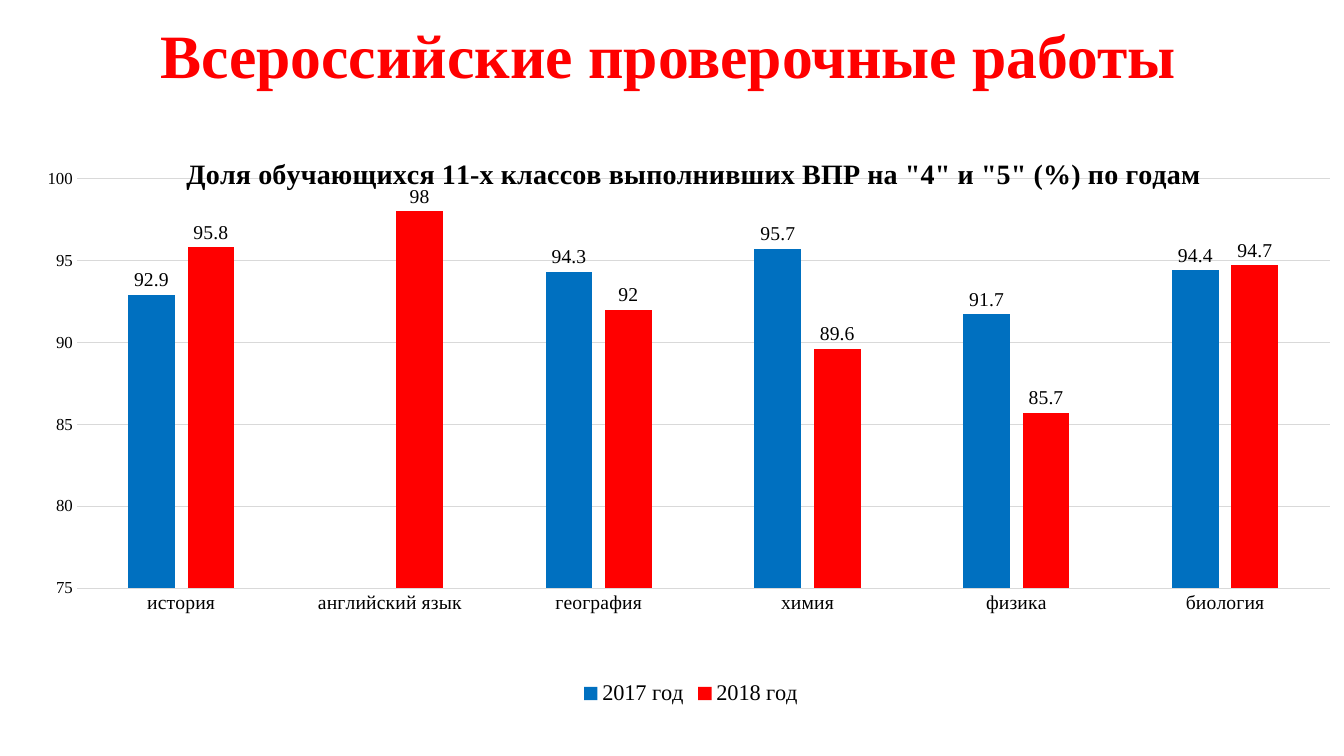
from dataclasses import dataclass

from lxml import etree
from pptx import Presentation
from pptx import util as u
from pptx.chart.data import CategoryChartData
from pptx.dml.color import RGBColor
from pptx.enum import chart as ch
from pptx.enum import text
from pptx.oxml.ns import qn


@dataclass(frozen=True)
class Theme:
    font: str = "Times New Roman"
    ink: str = "000000"
    accent: str = "FF0000"
    grid: str = "D9D9D9"
    series: tuple = ("0070C0", "FF0000")
    heading: int = 44
    chart_title: int = 20
    legend: int = 16
    label: int = 14
    scale: int = 12


THEME = Theme()
WIDTH, HEIGHT = 13.33, 7.5

# Boxes as shares of the slide: left, top, width, height
HEADING_BOX = (0.066, 0.019, 0.863, 0.117)
CHART_BOX = (0.028, 0.169, 0.972, 0.771)

HEADING = "Всероссийские проверочные работы"
CHART_TITLE = 'Доля обучающихся 11-х классов выполнивших ВПР на "4" и "5" (%) по годам'
SUBJECTS = ["история", "английский язык", "география", "химия", "физика", "биология"]
RESULTS = {
    "2017 год": [92.9, None, 94.3, 95.7, 91.7, 94.4],
    "2018 год": [95.8, 98, 92, 89.6, 85.7, 94.7],
}


def place(box):
    sides = (WIDTH, HEIGHT, WIDTH, HEIGHT)
    return [u.Inches(share * side) for share, side in zip(box, sides)]


def apply(target, values):
    for name, value in values.items():
        setattr(target, name, value)


def style_font(font, size, color=THEME.ink, bold=False):
    apply(font, {"name": THEME.font, "size": u.Pt(size), "bold": bold})
    font.color.rgb = RGBColor.from_string(color)


def style_line(line):
    line.color.rgb = RGBColor.from_string(THEME.grid)
    line.width = u.Pt(0.75)


def set_layout(parent, index, values):
    """Put a manual chart layout into a plot area or a chart title."""
    for old in parent.findall(qn("c:layout")):
        parent.remove(old)
    layout = etree.Element(qn("c:layout"))
    manual = etree.SubElement(layout, qn("c:manualLayout"))
    for name, value in values.items():
        etree.SubElement(manual, qn(f"c:{name}")).set("val", str(value))
    parent.insert(index, layout)


def add_heading(slide, box):
    title = slide.shapes.title
    apply(title, dict(zip(("left", "top", "width", "height"), place(box))))
    frame = title.text_frame
    apply(frame, {"text": HEADING, "word_wrap": True,
                  "vertical_anchor": text.MSO_ANCHOR.MIDDLE})
    paragraph = frame.paragraphs[0]
    apply(paragraph, {"alignment": text.PP_ALIGN.CENTER, "line_spacing": 0.9})
    style_font(paragraph.runs[0].font, THEME.heading, THEME.accent, True)


def style_axes(chart):
    for axis, size in ((chart.category_axis, THEME.label), (chart.value_axis, THEME.scale)):
        apply(axis, {"major_tick_mark": ch.XL_TICK_MARK.NONE,
                     "minor_tick_mark": ch.XL_TICK_MARK.NONE})
        style_font(axis.tick_labels.font, size)
    style_line(chart.category_axis.format.line)
    scale = chart.value_axis
    apply(scale, {"minimum_scale": 75, "maximum_scale": 100, "major_unit": 5,
                  "has_major_gridlines": True})
    scale.format.line.fill.background()
    style_line(scale.major_gridlines.format.line)


def style_bars(plot):
    apply(plot, {"gap_width": 219, "overlap": -27, "vary_by_categories": False})
    for series, color in zip(plot.series, THEME.series):
        series.format.fill.solid()
        series.format.fill.fore_color.rgb = RGBColor.from_string(color)
        labels = series.data_labels
        apply(labels, {"show_value": True,
                       "position": ch.XL_LABEL_POSITION.OUTSIDE_END})
        style_font(labels.font, THEME.label)


def add_results_chart(slide, box):
    data = CategoryChartData()
    data.categories = SUBJECTS
    for year, shares in RESULTS.items():
        data.add_series(year, shares)
    chart = slide.shapes.add_chart(
        ch.XL_CHART_TYPE.COLUMN_CLUSTERED, *place(box), data).chart
    style_font(chart.font, 10)
    style_axes(chart)
    style_bars(chart.plots[0])

    # Title lies over the top of the plot
    chart.has_title = True
    title = chart.chart_title
    title.text_frame.text = CHART_TITLE
    style_font(title.text_frame.paragraphs[0].runs[0].font, THEME.chart_title, bold=True)
    title.element.find(qn("c:overlay")).set("val", "1")
    set_layout(title.element, 1, {"xMode": "edge", "yMode": "edge", "x": 0.11, "y": 0.04})

    # Plot area
    set_layout(chart.element.find(".//" + qn("c:plotArea")), 0, {
        "layoutTarget": "inner", "xMode": "edge", "yMode": "edge",
        "x": 0.03, "y": 0.087, "w": 0.959, "h": 0.703})

    # Legend
    chart.has_legend = True
    apply(chart.legend, {"position": ch.XL_LEGEND_POSITION.BOTTOM,
                         "include_in_layout": False})
    style_font(chart.legend.font, THEME.legend)


def main():
    presentation = Presentation()
    apply(presentation, {"slide_width": u.Inches(WIDTH), "slide_height": u.Inches(HEIGHT)})
    slide = presentation.slides.add_slide(presentation.slide_layouts.get_by_name("Title Only"))
    add_results_chart(slide, CHART_BOX)
    add_heading(slide, HEADING_BOX)
    presentation.save("out.pptx")


if __name__ == "__main__":
    main()
